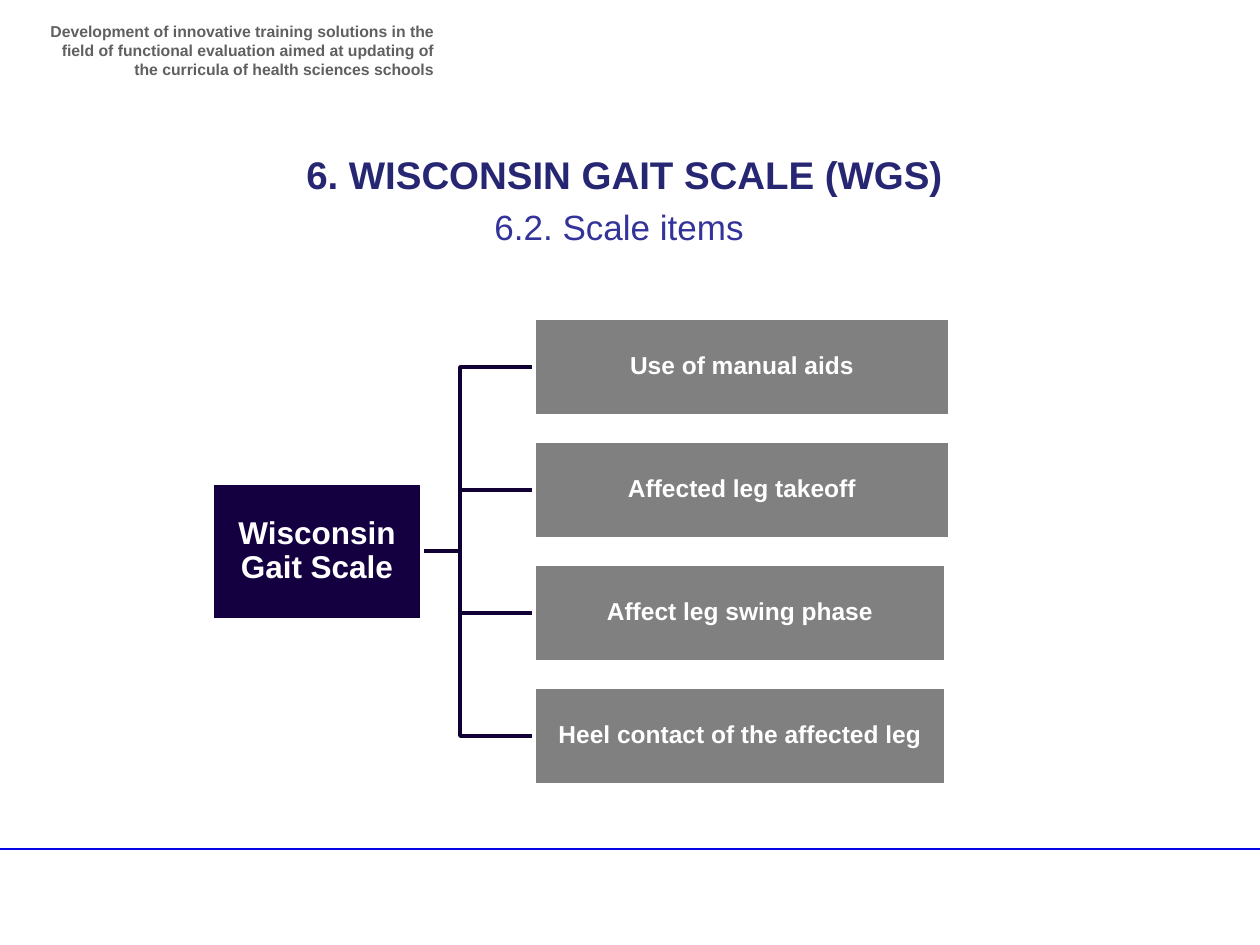
from lxml import etree
from pptx import Presentation
from pptx.dml.color import RGBColor
from pptx.enum.shapes import MSO_CONNECTOR, MSO_SHAPE
from pptx.enum.text import MSO_ANCHOR, PP_ALIGN
from pptx.oxml.ns import qn
from pptx.util import Pt

LEFT, CENTER, RIGHT = PP_ALIGN.LEFT, PP_ALIGN.CENTER, PP_ALIGN.RIGHT
MIDDLE = MSO_ANCHOR.MIDDLE
RECTANGLE = MSO_SHAPE.RECTANGLE
STRAIGHT = MSO_CONNECTOR.STRAIGHT

# text, (left, top, width, height), size, colour, bold, alignment
HEADINGS = [
    ("Development of innovative training solutions in the ﬁeld of functional "
     "evaluation aimed at updating of the curricula of health sciences schools",
     (35, 16, 411, 59), 9, "606060", True, RIGHT),
    ("6. WISCONSIN GAIT SCALE (WGS)", (84, 145, 1081, 59), 22, "262673", True, CENTER),
    ("6.2. Scale items", (482, 199, 295, 97), 20, "333399", False, LEFT),
]
ROOT = ("Wisconsin Gait Scale", (212, 483, 210, 137))
ITEMS = [  # text, width
    ("Use of manual aids", 416),
    ("Affected leg takeoff", 416),
    ("Affect leg swing phase", 412),
    ("Heel contact of the affected leg", 412),
]
ITEM_LEFT, ITEM_TOP, ITEM_HEIGHT, ITEM_PITCH = 534, 318, 98, 123
BRANCH_LEFT, BRANCH_MIDDLE = 386, 460
FOOTER_LEFT, FOOTER_RIGHT, FOOTER_Y = -6, 1260, 849

SCALE = 914400 / 126


def px(length):
    return round(length * SCALE)


def color(value):
    return RGBColor.from_string(value)


def write(shape, text, size, hue, bold, alignment):
    frame = shape.text_frame
    frame.word_wrap = True
    frame.text = text
    para = frame.paragraphs[0]
    para.alignment = alignment
    font = para.runs[0].font
    font.name, font.size, font.bold = "Arial", Pt(size), bold
    font.color.rgb = color(hue)
    return frame


def set_line(shape, hue, width):
    shape.line.color.rgb = color(hue)
    shape.line.width = Pt(width)


def add_node(page, text, bounds, fill, size):
    node = page.shapes.add_shape(RECTANGLE, *map(px, bounds))
    node.shadow.inherit = False
    node.fill.solid()
    node.fill.fore_color.rgb = color(fill)
    set_line(node, "FFFFFF", 2)
    frame = write(node, text, size, "FFFFFF", True, CENTER)
    frame.vertical_anchor = MIDDLE
    frame.margin_left = frame.margin_right = px(1)
    frame.margin_top = frame.margin_bottom = px(1)
    frame.paragraphs[0].line_spacing = 0.9


def add_branch(page, start_y, end_y):
    """Draw the open elbow from the root to one item."""
    builder = page.shapes.build_freeform(BRANCH_LEFT, start_y, SCALE)
    builder.add_line_segments(
        [(BRANCH_MIDDLE, start_y), (BRANCH_MIDDLE, end_y), (ITEM_LEFT, end_y)],
        close=False)
    branch = builder.convert_to_shape()
    branch.shadow.inherit = False
    branch.fill.background()
    set_line(branch, "100034", 2)


def main():
    deck = Presentation()
    deck.slide_width, deck.slide_height = px(1260), px(945)
    page = deck.slides.add_slide(deck.slide_layouts[6])

    footer = page.shapes.add_connector(
        STRAIGHT, *map(px, (FOOTER_LEFT, FOOTER_Y, FOOTER_RIGHT, FOOTER_Y)))
    set_line(footer, "0404E6", 1)
    etree.SubElement(footer._element.spPr, qn("a:effectLst"))

    for text, bounds, *style in HEADINGS:
        write(page.shapes.add_textbox(*map(px, bounds)), text, *style)

    root_text, root_bounds = ROOT
    root_y = root_bounds[1] + root_bounds[3] // 2
    tops = [ITEM_TOP + index * ITEM_PITCH for index in range(len(ITEMS))]
    for top in reversed(tops):
        add_branch(page, root_y, top + ITEM_HEIGHT // 2)
    add_node(page, root_text, root_bounds, "140041", 18)
    for (text, width), top in zip(ITEMS, tops):
        add_node(page, text, (ITEM_LEFT, top, width, ITEM_HEIGHT), "808080", 14)

    deck.save("out.pptx")


if __name__ == "__main__":
    main()
